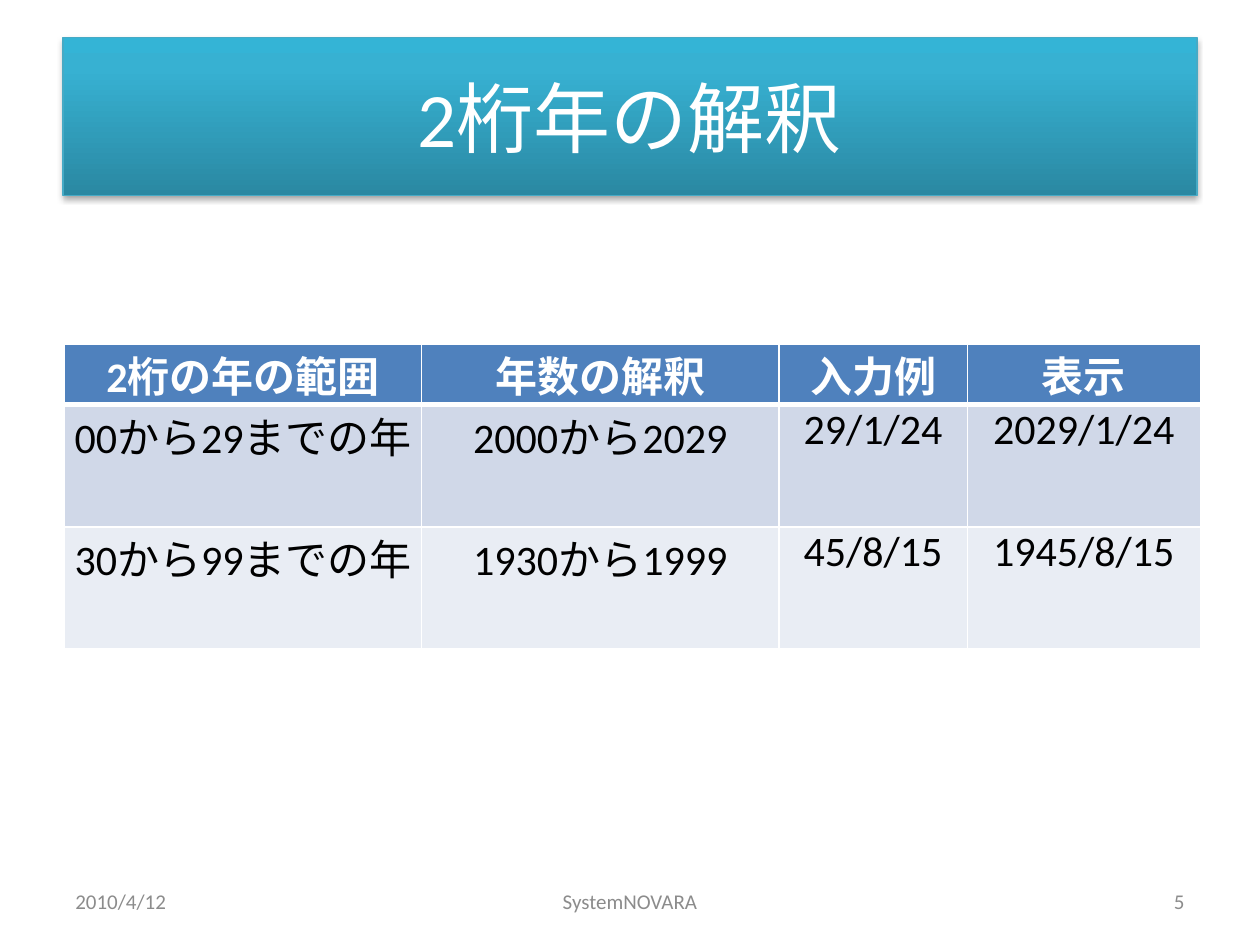
import lxml.etree
import pptx
import pptx.dml.color
import pptx.enum.shapes
import pptx.enum.text
import pptx.oxml.ns
import pptx.util

Cm, Pt = pptx.util.Cm, pptx.util.Pt
qn = pptx.oxml.ns.qn
ALIGN = pptx.enum.text.PP_ALIGN
MIDDLE = pptx.enum.text.MSO_ANCHOR.MIDDLE

FONT = "Calibri"
TITLE = "2桁年の解釈"
TITLE_GRADIENT = [(0, "2A88A2"), (80, "37B1D2"), (100, "34B4D6")]
ROWS = [
    ("2桁の年の範囲", "年数の解釈", "入力例", "表示"),
    ("00から29までの年", "2000から2029", "29/1/24", "2029/1/24"),
    ("30から99までの年", "1930から1999", "45/8/15", "1945/8/15"),
]
ROW_FILLS = ["4F81BD", "D0D8E8", "E9EDF4"]
ROW_HEIGHTS = [1.22, 2.46, 2.46]
COLUMN_WIDTHS = [7.2, 7.2, 3.8, 4.7]
FOOTERS = [  # text, left, width, alignment
    ("2010/4/12", 1.27, 5.93, ALIGN.LEFT),
    ("SystemNOVARA", 8.68, 8.04, ALIGN.CENTER),
    ("5", 18.2, 5.93, ALIGN.RIGHT),
]


def color(value):
    return pptx.dml.color.RGBColor.from_string(value)


def add_element(parent, tag, **attributes):
    return lxml.etree.SubElement(
        parent, qn(tag), {name: str(value) for name, value in attributes.items()})


def write(text_frame, text, size, font_color, alignment, bold=False):
    text_frame.text = text
    text_frame.word_wrap = True
    paragraph = text_frame.paragraphs[0]
    paragraph.alignment = alignment
    font = paragraph.runs[0].font
    font.name, font.size, font.bold = FONT, Pt(size), bold
    font.color.rgb = color(font_color)


def add_title(slide):
    shape = slide.shapes.add_shape(
        pptx.enum.shapes.MSO_SHAPE.RECTANGLE, Cm(1.27), Cm(0.76), Cm(22.86), Cm(3.18))
    shape.fill.gradient()
    shape.fill.gradient_angle = 90
    properties = shape._element.spPr
    stops = properties.find(".//" + qn("a:gsLst"))
    for stop in list(stops):
        stops.remove(stop)
    for position, value in TITLE_GRADIENT:
        stop = add_element(stops, "a:gs", pos=position * 1000)
        add_element(stop, "a:srgbClr", val=value)
    shape.line.color.rgb = color("46AAC5")
    shape.line.width = Pt(0.75)
    shape.shadow.inherit = False
    shadow = add_element(properties.find(qn("a:effectLst")), "a:outerShdw",
                         blurRad=Pt(3.1), dist=Pt(1.8), dir=90 * 60000, rotWithShape=0)
    shadow_color = add_element(shadow, "a:srgbClr", val="000000")
    add_element(shadow_color, "a:alpha", val=35000)
    shape.text_frame.vertical_anchor = MIDDLE
    write(shape.text_frame, TITLE, 44, "FFFFFF", ALIGN.CENTER)


def add_borders(cell, row):
    """White borders, thicker between the header and the first data row."""
    widths = {"L": 1, "R": 1, "T": 3 if row == 1 else 1, "B": 3 if row == 0 else 1}
    for side, width in widths.items():
        line = add_element(cell._tc.get_or_add_tcPr(), "a:ln" + side, w=Pt(width))
        add_element(add_element(line, "a:solidFill"), "a:srgbClr", val="FFFFFF")


def add_year_table(slide):
    table = slide.shapes.add_table(
        len(ROWS), len(COLUMN_WIDTHS), Cm(1.3), Cm(6.93),
        Cm(sum(COLUMN_WIDTHS)), Cm(sum(ROW_HEIGHTS))).table
    for column, width in zip(table.columns, COLUMN_WIDTHS):
        column.width = Cm(width)
    for row, texts in enumerate(ROWS):
        header = row == 0
        table.rows[row].height = Cm(ROW_HEIGHTS[row])
        for column, text in enumerate(texts):
            cell = table.cell(row, column)
            cell.margin_left = cell.margin_right = Cm(0.18)
            cell.margin_top = cell.margin_bottom = 0
            add_borders(cell, row)
            cell.fill.solid()
            cell.fill.fore_color.rgb = color(ROW_FILLS[row])
            write(cell.text_frame, text, 24, "FFFFFF" if header else "000000",
                  ALIGN.CENTER, bold=header)


def add_footers(slide):
    for text, left, width, alignment in FOOTERS:
        box = slide.shapes.add_textbox(Cm(left), Cm(17.65), Cm(width), Cm(1.02))
        box.text_frame.vertical_anchor = MIDDLE
        write(box.text_frame, text, 12, "8C8C8C", alignment)


def main():
    presentation = pptx.Presentation()
    presentation.slide_width, presentation.slide_height = Cm(25.4), Cm(19.05)
    slide = presentation.slides.add_slide(presentation.slide_layouts[6])
    add_title(slide)
    add_year_table(slide)
    add_footers(slide)
    presentation.save("out.pptx")


if __name__ == "__main__":
    main()
